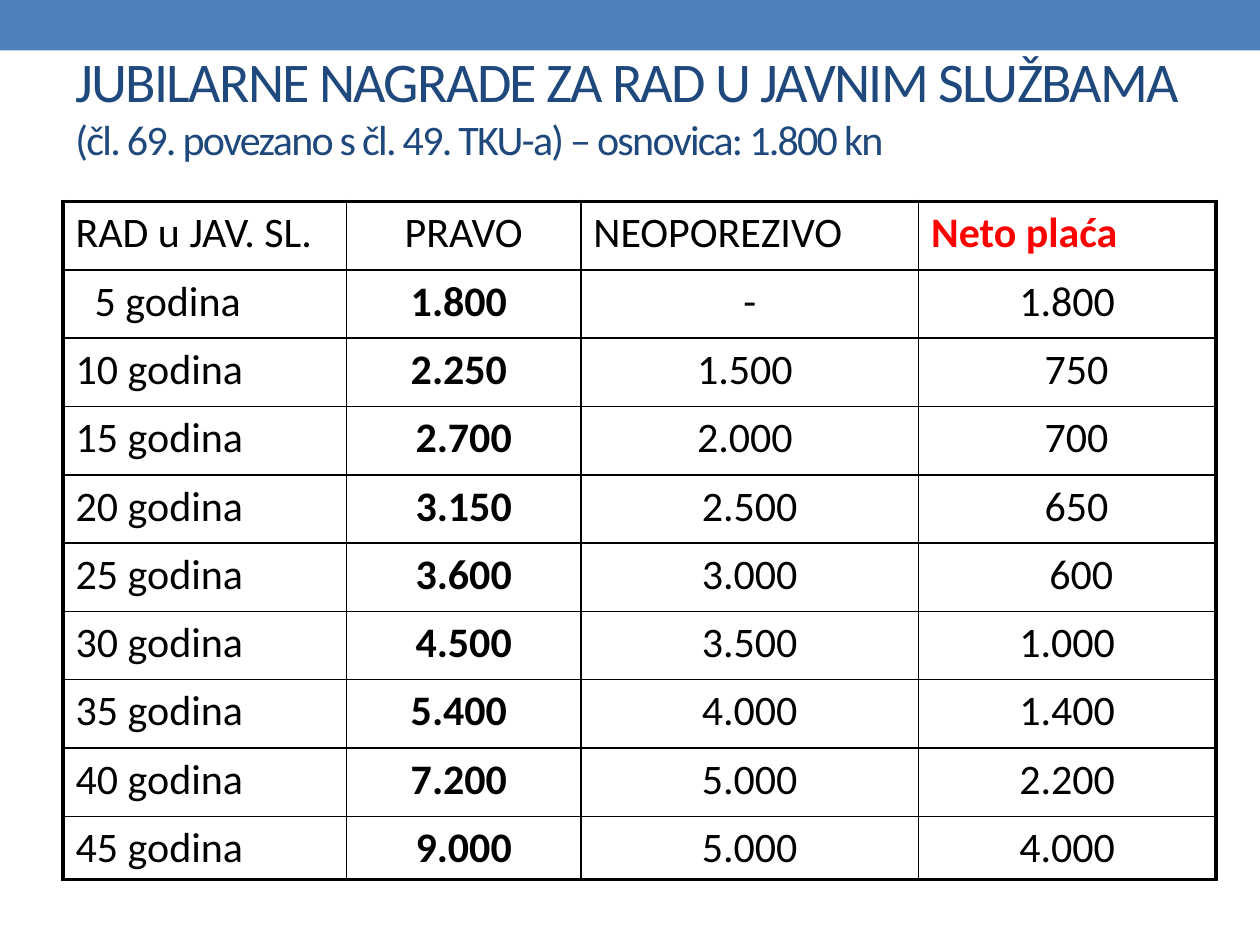
from dataclasses import dataclass
from typing import Any

from lxml.etree import SubElement
from pptx import Presentation
from pptx.dml.color import RGBColor
from pptx.enum.shapes import MSO_SHAPE as Shape
from pptx.enum.text import MSO_ANCHOR as Anchor, PP_ALIGN as Align
from pptx.oxml.ns import qn
from pptx.util import Inches, Pt

COLUMNS, ROWS = 200, 150
HEADINGS = ["RAD u JAV. SL.", "PRAVO", "NEOPOREZIVO", "Neto plaća"]
AWARDS = [
    ["  5 godina", "1.800 ", "-", "1.800"],
    ["10 godina", "2.250 ", "1.500 ", "  750"],
    ["15 godina", "2.700", "2.000 ", "  700"],
    ["20 godina", "3.150", "2.500", "  650"],
    ["25 godina", "3.600", "3.000", "   600"],
    ["30 godina", "4.500", "3.500", "1.000"],
    ["35 godina", "5.400 ", "4.000", "1.400"],
    ["40 godina", "7.200 ", "5.000", "2.200"],
    ["45 godina", "9.000", "5.000", "4.000"],
]


def color(value):
    return RGBColor.from_string(value)


@dataclass
class Painter:
    deck: Any
    page: Any
    font: str = "Calibri"
    accent: str = "4F81BD"
    heading: str = "1F497D"
    ink: str = "000000"
    alert: str = "FF0000"
    size: int = 24
    space: float = 0.075

    def across(self, columns):
        return int(self.deck.slide_width * columns / COLUMNS)

    def down(self, rows):
        return int(self.deck.slide_height * rows / ROWS)

    def place(self, left, top, width, height):
        return self.across(left), self.down(top), self.across(width), self.down(height)

    def band(self, *area):
        box = self.page.shapes.add_shape(Shape.RECTANGLE, *self.place(*area))
        box.shadow.inherit = False
        box.fill.solid()
        box.fill.fore_color.rgb = color(self.accent)
        box.line.fill.background()

    def title(self, lines, *area):
        frame = self.page.shapes.add_textbox(*self.place(*area)).text_frame
        frame.word_wrap = True
        frame.vertical_anchor = Anchor.BOTTOM
        frame.margin_bottom = Inches(0.25)
        para = frame.paragraphs[0]
        for index, (text, size) in enumerate(lines):
            if index:
                para.add_line_break()
            span = para.add_run()
            span.text = text
            span.font.size = Pt(size)
            span.font.name = self.font
            span.font.color.rgb = color(self.heading)
            span._r.get_or_add_rPr().set("spc", "-100")

    def border(self, cell, side, weight):
        properties = cell._tc.get_or_add_tcPr()
        line = SubElement(properties, qn(f"a:ln{side}"), w=str(Pt(weight)))
        fill = SubElement(line, qn("a:solidFill"))
        SubElement(fill, qn("a:srgbClr"), val=self.ink)

    def label(self, cell, text, align, bold, ink):
        para = cell.text_frame.paragraphs[0]
        para.text = text.lstrip()
        para.alignment = align
        para.font.name = self.font
        para.font.size = Pt(self.size)
        para.font.bold = bold
        para.font.color.rgb = color(ink)
        indent = len(text) - len(text.lstrip())
        if indent:
            para._p.get_or_add_pPr().set("marL", str(Inches(indent * self.space)))

    def table(self, records, widths, heights, left, top):
        area = self.place(left, top, sum(widths), sum(heights))
        grid = self.page.shapes.add_table(len(heights), len(widths), *area).table
        grid.first_row = grid.horz_banding = False
        for column, width in zip(grid.columns, widths):
            column.width = self.across(width)
        for row, height in zip(grid.rows, heights):
            row.height = self.down(height)
        for y, record in enumerate(records):
            for x, text in enumerate(record):
                cell = grid.cell(y, x)
                outer = {
                    "L": x == 0,
                    "R": x == len(widths) - 1,
                    "T": y == 0,
                    "B": y == len(heights) - 1,
                }
                for side, edge in outer.items():
                    self.border(cell, side, 2.25 if edge else 1)
                cell.fill.background()
                centred = x == 1 or (x and y)
                marked = outer["T"] and outer["R"]
                self.label(
                    cell,
                    text,
                    Align.CENTER if centred else Align.LEFT,
                    bool(marked or (x == 1 and y)),
                    self.alert if marked else self.ink,
                )


def main():
    deck = Presentation()
    deck.slide_width, deck.slide_height = Inches(10), Inches(7.5)
    painter = Painter(deck, deck.slides.add_slide(deck.slide_layouts[6]))
    painter.band(0, 0, COLUMNS, 8)
    painter.title(
        [
            ("JUBILARNE NAGRADE ZA RAD U JAVNIM SLUŽBAMA", 32),
            ("(čl. 69. povezano s čl. 49. TKU-a) – osnovica: 1.800 kn", 24),
        ],
        10, -10, 183, 41,
    )
    heights = [(107.6 - 10) / len(AWARDS)] * len(AWARDS) + [10]
    painter.table([HEADINGS] + AWARDS, [45, 37.2, 53.6, 47.2], heights, 10, 32)
    deck.save("out.pptx")


if __name__ == "__main__":
    main()
